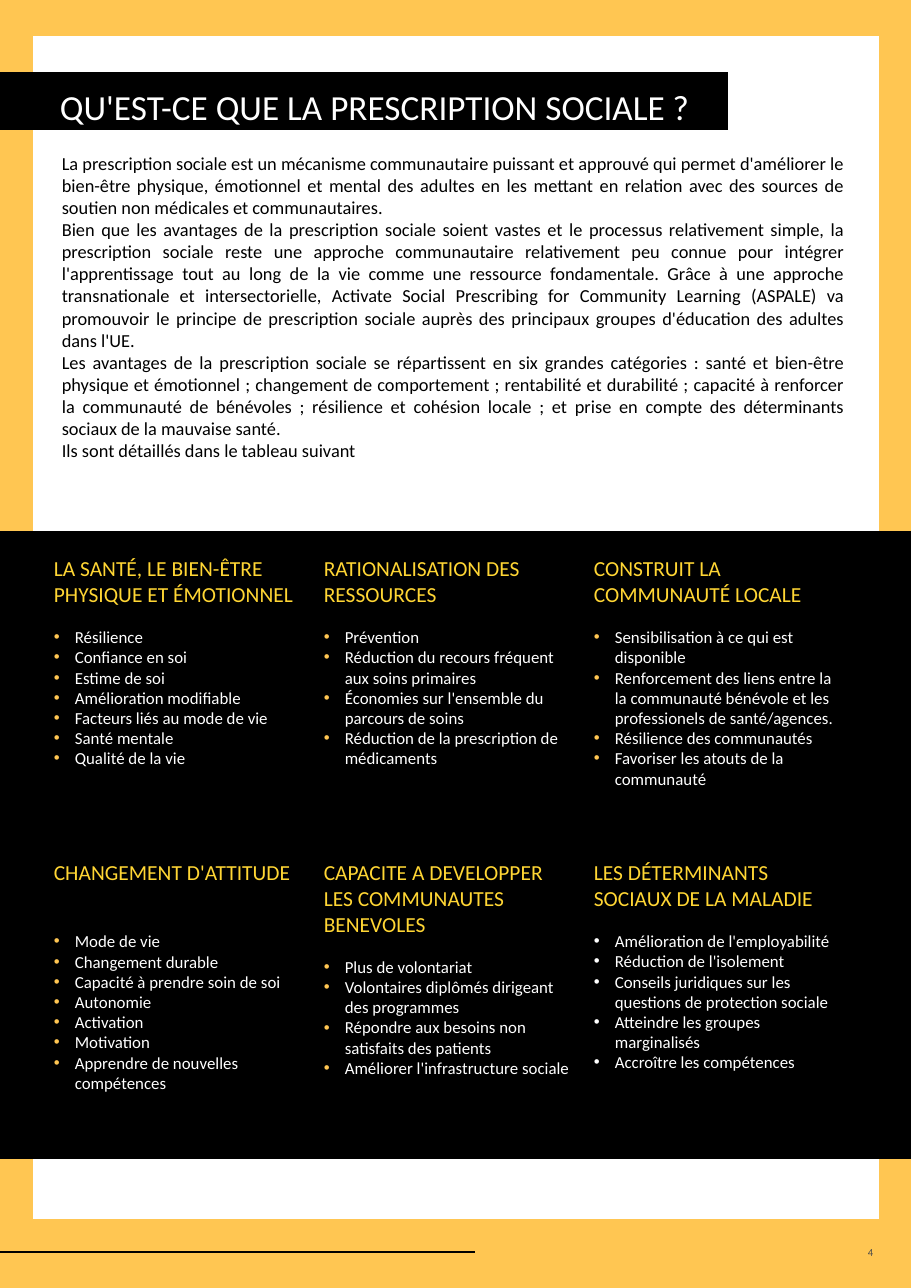
import pptx
import pptx.util
import pptx.dml.color
import pptx.enum.shapes
import pptx.enum.text
import pptx.oxml.ns
import lxml.etree

COLORS = {"amber": "FFC652", "yellow": "FFD634", "white": "FFFFFF",
          "black": "000000", "grey": "4B4B4B"}
FONT = "Calibri"
TITLE = "QU'EST-CE QUE LA PRESCRIPTION SOCIALE ?"
INTRO = [
    "La prescription sociale est un mécanisme communautaire puissant et approuvé qui permet d'améliorer le bien-être physique, émotionnel et mental des adultes en les mettant en relation avec des sources de soutien non médicales et communautaires.",
    "Bien que les avantages de la prescription sociale soient vastes et le processus relativement simple, la prescription sociale reste une approche communautaire relativement peu connue pour intégrer l'apprentissage tout au long de la vie comme une ressource fondamentale. Grâce à une approche transnationale et intersectorielle, Activate Social Prescribing for Community Learning (ASPALE) va promouvoir le principe de prescription sociale auprès des principaux groupes d'éducation des adultes dans l'UE.",
    "Les avantages de la prescription sociale se répartissent en six grandes catégories : santé et bien-être physique et émotionnel ; changement de comportement ; rentabilité et durabilité ; capacité à renforcer la communauté de bénévoles ; résilience et cohésion locale ; et prise en compte des déterminants sociaux de la mauvaise santé.",
    "Ils sont détaillés dans le tableau suivant",
]
CATEGORIES = [
    ("LA SANTÉ, LE BIEN-ÊTRE PHYSIQUE ET ÉMOTIONNEL", "amber", 13, [
        "Résilience", "Confiance en soi", "Estime de soi",
        "Amélioration modifiable", "Facteurs liés au mode de vie",
        "Santé mentale", "Qualité de la vie"]),
    ("RATIONALISATION DES RESSOURCES", "amber", 13, [
        "Prévention", "Réduction du recours fréquent aux soins primaires",
        "Économies sur l'ensemble du parcours de soins",
        "Réduction de la prescription de médicaments"]),
    ("CONSTRUIT LA COMMUNAUTÉ LOCALE", "amber", 13, [
        "Sensibilisation à ce qui est disponible",
        "Renforcement des liens entre la la communauté bénévole et les professionels de santé/agences.",
        "Résilience des communautés",
        "Favoriser les atouts de la communauté"]),
    ("CHANGEMENT D'ATTITUDE", "amber", 30, [
        "Mode de vie", "Changement durable", "Capacité à prendre soin de soi",
        "Autonomie", "Activation", "Motivation",
        "Apprendre de nouvelles compétences"]),
    ("CAPACITE A DEVELOPPER LES COMMUNAUTES BENEVOLES", "amber", 13, [
        "Plus de volontariat", "Volontaires diplômés dirigeant des programmes",
        "Répondre aux besoins non satisfaits des patients",
        "Améliorer l'infrastructure sociale"]),
    ("LES DÉTERMINANTS SOCIAUX DE LA MALADIE", "white", 13, [
        "Amélioration de l'employabilité", "Réduction de l'isolement",
        "Conseils juridiques sur les questions de protection sociale",
        "Atteindre les groupes marginalisés", "Accroître les compétences"]),
]
PAGE_NUMBER = "4"

PAGE_W, PAGE_H = 911, 1288
GRID_X, GRID_Y, STEP_X, STEP_Y, COLUMNS = 43, 550, 270, 304, 3
CELL_W, CELL_H = 273, 305
INDENT = 21
ALIGN = pptx.enum.text.PP_ALIGN


def px(n):
    return pptx.util.Emu(round(n * 914400 / 110.2))


def rgb(name):
    return pptx.dml.color.RGBColor.from_string(COLORS[name])


def add_rect(s, x, y, w, h, color):
    sp = s.shapes.add_shape(pptx.enum.shapes.MSO_SHAPE.RECTANGLE,
                            px(x), px(y), px(w), px(h))
    sp.shadow.inherit = False
    sp.fill.solid()
    sp.fill.fore_color.rgb = rgb(color)
    sp.line.fill.background()
    return sp


def add_text_frame(s, x, y, w, h):
    tf = s.shapes.add_textbox(px(x), px(y), px(w), px(h)).text_frame
    tf.word_wrap = True
    return tf


def write(p, text, size, color, align=ALIGN.LEFT):
    p.text = text
    p.alignment = align
    font = p.runs[0].font
    font.name = FONT
    font.size = pptx.util.Pt(size)
    font.color.rgb = rgb(color)


def add_bullet(p, color):
    qn = pptx.oxml.ns.qn
    pPr = p._p.get_or_add_pPr()
    pPr.set("marL", str(px(INDENT)))
    pPr.set("indent", str(-px(INDENT)))
    bu_clr = lxml.etree.SubElement(pPr, qn("a:buClr"))
    lxml.etree.SubElement(bu_clr, qn("a:srgbClr")).set("val", COLORS[color])
    lxml.etree.SubElement(pPr, qn("a:buFont")).set("typeface", "Arial")
    lxml.etree.SubElement(pPr, qn("a:buChar")).set("char", "•")


def add_category(s, x, y, heading, bullet_color, gap, items):
    tf = add_text_frame(s, x, y, CELL_W, CELL_H)
    write(tf.paragraphs[0], heading, 14, "yellow")
    for i, item in enumerate(items):
        p = tf.add_paragraph()
        add_bullet(p, bullet_color)
        write(p, item, 11, "white")
        if i == 0:
            p.space_before = pptx.util.Pt(gap)


def main():
    prs = pptx.Presentation()
    prs.slide_width, prs.slide_height = px(PAGE_W), px(PAGE_H)
    s = prs.slides.add_slide(prs.slide_layouts[6])

    add_rect(s, 0, 0, PAGE_W, PAGE_H, "amber")
    add_rect(s, 33, 36, 846, 1183, "white")
    add_rect(s, 0, 531, PAGE_W, 628, "black")

    rule = s.shapes.add_connector(pptx.enum.shapes.MSO_CONNECTOR.STRAIGHT,
                                  px(0), px(1252), px(475), px(1252))
    rule.line.color.rgb = rgb("black")
    rule.line.width = pptx.util.Pt(1.5)
    lxml.etree.SubElement(rule._element.spPr, pptx.oxml.ns.qn("a:effectLst"))

    tf = add_text_frame(s, 51, 147, 805, 330)
    for i, text in enumerate(INTRO):
        p = tf.add_paragraph() if i else tf.paragraphs[0]
        write(p, text, 12, "black", ALIGN.JUSTIFY)

    tf = add_rect(s, 0, 72, 728, 58, "black").text_frame
    tf.vertical_anchor = pptx.enum.text.MSO_ANCHOR.MIDDLE
    tf.margin_left, tf.margin_top, tf.margin_bottom = px(60), px(11), 0
    write(tf.paragraphs[0], TITLE, 23, "white")

    for i, category in enumerate(CATEGORIES):
        row, col = divmod(i, COLUMNS)
        add_category(s, GRID_X + col * STEP_X, GRID_Y + row * STEP_Y, *category)

    tf = add_text_frame(s, 765, 1243, 119, 18)
    tf.vertical_anchor = pptx.enum.text.MSO_ANCHOR.MIDDLE
    tf.margin_top = tf.margin_bottom = 0
    write(tf.paragraphs[0], PAGE_NUMBER, 7, "grey", ALIGN.RIGHT)

    prs.save("out.pptx")


if __name__ == "__main__":
    main()
